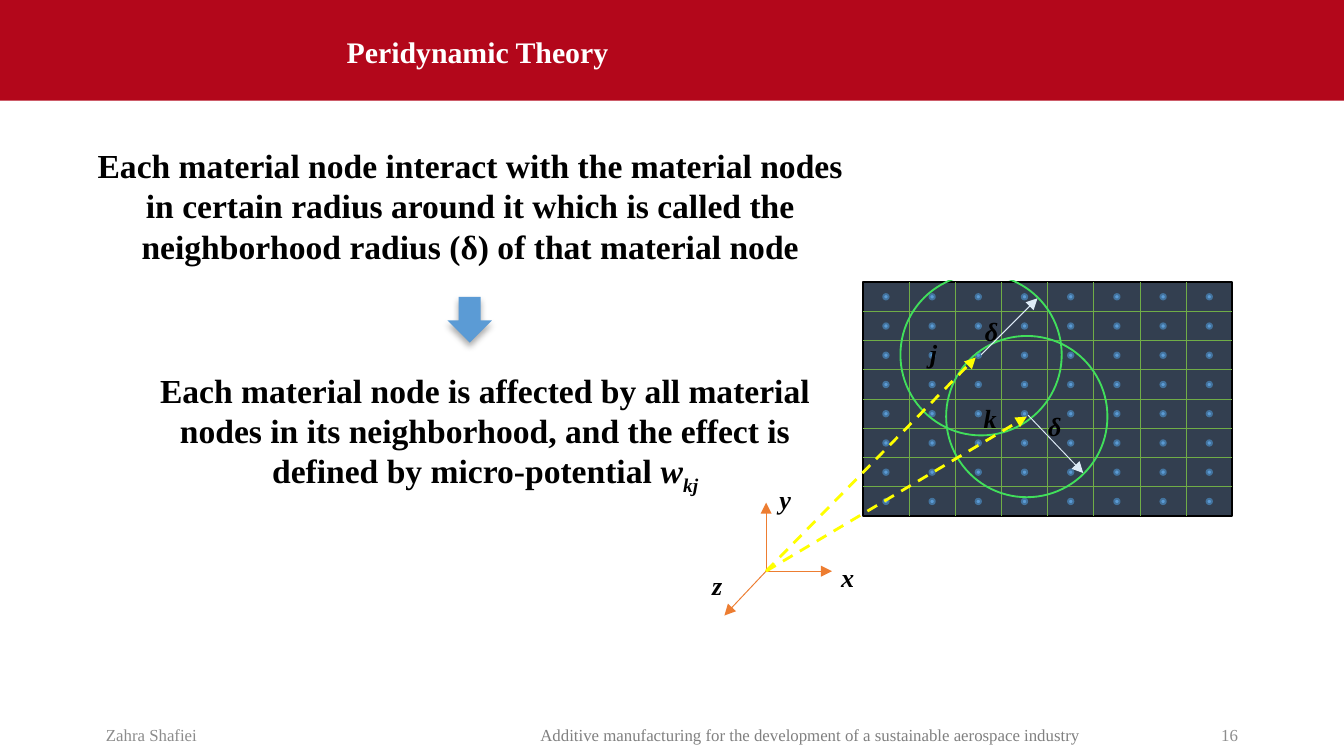
from lxml import etree
from pptx import Presentation
from pptx.dml.color import RGBColor
from pptx.enum.dml import MSO_LINE
from pptx.enum.shapes import MSO_CONNECTOR, MSO_SHAPE
from pptx.enum.text import MSO_ANCHOR, MSO_AUTO_SIZE, PP_ALIGN
from pptx.oxml.ns import qn
from pptx.util import Inches, Pt

LEFT, CENTER, RIGHT = PP_ALIGN.LEFT, PP_ALIGN.CENTER, PP_ALIGN.RIGHT
TOP, MIDDLE = MSO_ANCHOR.TOP, MSO_ANCHOR.MIDDLE
RECT, DOWN_ARROW = MSO_SHAPE.RECTANGLE, MSO_SHAPE.DOWN_ARROW
CIRCLE = MSO_SHAPE.FLOWCHART_CONNECTOR
STRAIGHT, DASH = MSO_CONNECTOR.STRAIGHT, MSO_LINE.DASH
GROW = MSO_AUTO_SIZE.SHAPE_TO_FIT_TEXT
FONT = "Times New Roman"
SLIDE_W = 10
SLIDE_H = SLIDE_W * 9 / 16

# Content: each run is (text, italic, subscript)
TITLE = "Peridynamic Theory"
STATEMENTS = [
    ((0.51, 1.03, 5.98, 1.01), [
        ("Each material node interact with the material nodes in certain radius "
         "around it which is called the neighborhood radius (δ) of that material node",
         False, False)]),
    ((0.99, 2.7, 5.24, 1.01), [
        ("Each material node is affected by all material nodes in its neighborhood, "
         "and the effect is defined by micro-potential ", False, False),
        ("w", True, False), ("kj", True, True)]),
]
FOOTERS = [
    ("Zahra Shafiei", (0.69, 5.32, 2.67, 0.3), LEFT, "8C8C8C"),
    ("Additive manufacturing for the development of a sustainable aerospace industry",
     (3.55, 5.32, 4.95, 0.3), CENTER, "808080"),
    ("16", (8.83, 5.32, 0.48, 0.3), RIGHT, "8C8C8C"),
]
LABELS = [  # text, left, top, width
    ("j", 6.82, 2.43, 0.43), ("k", 7.22, 2.91, 0.43),
    ("δ", 7.23, 2.26, 0.26), ("δ", 7.7, 2.97, 0.26),
    ("x", 6.16, 4.09, 0.43), ("y", 5.7, 3.51, 0.43), ("z", 5.2, 4.15, 0.43),
]

# Diagram geometry
ORIGIN = (5.7, 4.25)
AXIS_ENDS = [(6.19, 4.25), (5.7, 3.74), (5.39, 4.58)]
POSITION_ENDS = [(7.26, 2.66), (7.64, 3.1)]
RADII = [((7.3, 2.64), (7.72, 2.22)), ((7.65, 3.09), (8.06, 3.52))]
HORIZONS = [(6.7, 2.04, 1.2, 1.2), (7.04, 2.5, 1.2, 1.2)]
BOARD = (6.42, 2.1, 2.75, 1.74)
CELLS = 8
NODE_SIZE = 0.04

prs = Presentation()
prs.slide_width, prs.slide_height = Inches(SLIDE_W), Inches(SLIDE_H)
s = prs.slides.add_slide(prs.slide_layouts[5])


def color(value):
    return RGBColor.from_string(value)


def add_shape(kind, box, fill=None, line=None):
    sp = s.shapes.add_shape(kind, *map(Inches, box))
    sp.shadow.inherit = False
    if fill:
        sp.fill.solid()
        sp.fill.fore_color.rgb = color(fill)
    else:
        sp.fill.background()
    if line:
        sp.line.color.rgb = color(line)
        sp.line.width = Pt(1)
    else:
        sp.line.fill.background()
    return sp


def add_line(start, end, line, width=0.5, arrow=True, dash=None):
    cx = s.shapes.add_connector(STRAIGHT, *map(Inches, start + end))
    cx.line.color.rgb = color(line)
    cx.line.width = Pt(width)
    if dash:
        cx.line.dash_style = dash
    if arrow:
        ln = cx.line._get_or_add_ln()
        etree.SubElement(ln, qn("a:tailEnd"), type="triangle")
    etree.SubElement(cx._element.spPr, qn("a:effectLst"))


def write(sp, runs, size, fill="000000", align=LEFT, anchor=TOP, bold=False):
    tf = sp.text_frame
    tf.word_wrap = True
    tf.vertical_anchor = anchor
    p = tf.paragraphs[0]
    p.alignment = align
    p.font.name, p.font.size, p.font.bold = FONT, Pt(size), bold
    p.font.color.rgb = color(fill)
    for text, italic, subscript in runs:
        r = p.add_run()
        r.text = text
        if italic:
            r.font.italic = True
        if subscript:
            r._r.get_or_add_rPr().set("baseline", "-25000")
    return p


def add_text(box, runs, size, **style):
    sp = s.shapes.add_textbox(*map(Inches, box))
    return sp, write(sp, runs, size, **style)


# Title on its band
title = s.shapes.title
title.left, title.top, title.width, title.height = map(Inches, (2.48, 0.14, 6.53, 0.52))
p = write(title, [(TITLE, False, False)], 16, fill="FFFFFF", anchor=MIDDLE, bold=True)
p.line_spacing = 0.9
band = add_shape(RECT, (0, 0, SLIDE_W, 0.75), "B3071B")
title._element.addprevious(band._element)

# Footer
for text, box, align, fill in FOOTERS:
    add_text(box, [(text, False, False)], 9, fill=fill, align=align, anchor=MIDDLE)

# Statements and the arrow between them
for box, runs in STATEMENTS:
    sp, p = add_text(box, runs, 18, align=CENTER, bold=True)
    sp.text_frame.auto_size = GROW
arrow = add_shape(DOWN_ARROW, (3.33, 2.21, 0.33, 0.34), "5B9BD5")
effects = arrow._element.spPr.find(qn("a:effectLst"))
shadow = etree.SubElement(effects, qn("a:outerShdw"), blurRad=str(Pt(3.5)),
                          dist=str(Pt(2.2)), dir="5400000", rotWithShape="0")
shadow_color = etree.SubElement(shadow, qn("a:srgbClr"), val="000000")
etree.SubElement(shadow_color, qn("a:alpha"), val="32000")

# Coordinate axes
for end in AXIS_ENDS:
    add_line(ORIGIN, end, "ED7D31")

# Material board: grid lines, then one node per cell
left, top, width, height = BOARD
cell_w, cell_h = width / CELLS, height / CELLS
add_shape(RECT, BOARD, "333F50", "000000")
for i in range(1, CELLS):
    x, y = left + i * cell_w, top + i * cell_h
    add_line((x, top), (x, top + height), "70AD47", arrow=False)
    add_line((left, y), (left + width, y), "70AD47", arrow=False)
for row in range(CELLS):
    for col in range(CELLS):
        x = left + (col + 0.5) * cell_w - NODE_SIZE / 2
        y = top + (row + 0.5) * cell_h - NODE_SIZE / 2
        add_shape(CIRCLE, (x, y, NODE_SIZE, NODE_SIZE), "5B9BD5", "43739E")

# Neighborhoods, radii and position vectors
for box in HORIZONS:
    add_shape(CIRCLE, box, line="41DF5B")
for start, end in RADII:
    add_line(start, end, "DEEBF7")
for end in POSITION_ENDS:
    add_line(ORIGIN, end, "FFFF00", width=1.5, dash=DASH)

# White strip trims the upper circle at the board edge
add_shape(RECT, (7.03, 2.03, 0.52, 0.05), "FFFFFF", "FFFFFF")

# Diagram labels
for text, x, y, w in LABELS:
    sp, p = add_text((x, y, w, 0.35), [(text, True, False)], 14, bold=True)
    p.line_spacing = 1.15
    p.space_after = Pt(8)

prs.save("out.pptx")
